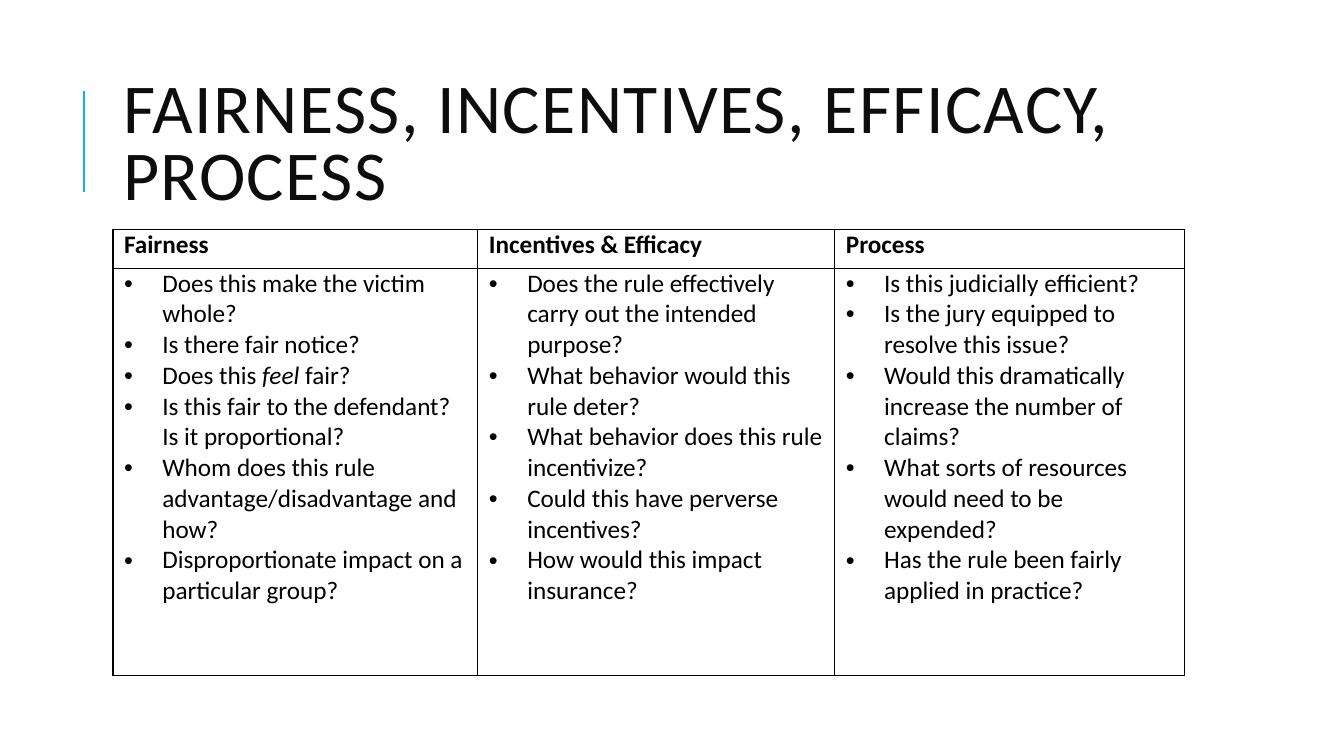
from lxml import etree
from pptx import Presentation
from pptx.dml.color import RGBColor
from pptx.enum import shapes, text
from pptx.oxml import ns
from pptx.util import Inches, Pt

COLORS = {"accent": "1CADE4", "title": "0D0D0D", "ink": "000000"}
FONT = "Calibri"
COLUMNS = [
    ("Fairness", 3.62, [
        "Does this make the victim whole?",
        "Is there fair notice?",
        "Does this *feel *fair?",
        "Is this fair to the defendant? Is it proportional?",
        "Whom does this rule advantage/disadvantage and how?",
        "Disproportionate impact on a particular group?",
    ]),
    ("Incentives & Efficacy", 3.54, [
        "Does the rule effectively carry out the intended purpose?",
        "What behavior would this rule deter?",
        "What behavior does this rule incentivize?",
        "Could this have perverse incentives?",
        "How would this impact insurance?",
    ]),
    ("Process", 3.47, [
        "Is this judicially efficient?",
        "Is the jury equipped to resolve this issue?",
        "Would this dramatically increase the number of claims?",
        "What sorts of resources would need to be expended?",
        "Has the rule been fairly applied in practice?",
    ]),
]


def style_run(run, size, color, bold=False):
    run.font.name = FONT
    run.font.size = Pt(size)
    run.font.bold = bold
    run.font.color.rgb = RGBColor.from_string(COLORS[color])


def style_cell(cell):
    cell.margin_left = cell.margin_right = Inches(0.11)
    cell.margin_top = cell.margin_bottom = 0
    properties = cell._tc.get_or_add_tcPr()
    for side in ("lnL", "lnR", "lnT", "lnB"):
        border = etree.SubElement(properties, ns.qn(f"a:{side}"), w=str(Pt(1)))
        fill = etree.SubElement(border, ns.qn("a:solidFill"))
        etree.SubElement(fill, ns.qn("a:srgbClr"), val=COLORS["ink"])
    cell.fill.background()


presentation = Presentation()
presentation.slide_width = Inches(13.33)
presentation.slide_height = Inches(7.5)
slide = presentation.slides.add_slide(presentation.slide_layouts[5])

accent_line = slide.shapes.add_connector(
    shapes.MSO_CONNECTOR.STRAIGHT, Inches(0.83), Inches(1.9), Inches(0.83), Inches(0.9))
accent_line.line.color.rgb = RGBColor.from_string(COLORS["accent"])
accent_line.line.width = Pt(1.5)
etree.SubElement(accent_line._element.spPr, ns.qn("a:effectLst"))

title = slide.shapes.title
title.left, title.top = Inches(1.12), Inches(0.64)
title.width, title.height = Inches(10.63), Inches(1.64)
title.text_frame.text = "FAIRNESS, INCENTIVES, EFFICACY, PROCESS"
title.text_frame.word_wrap = True
title.text_frame.auto_size = text.MSO_AUTO_SIZE.NONE
title.text_frame.vertical_anchor = text.MSO_ANCHOR.MIDDLE
heading = title.text_frame.paragraphs[0]
heading.alignment = text.PP_ALIGN.LEFT
heading.line_spacing = 0.8
style_run(heading.runs[0], 50, "title")
heading.runs[0].font._element.set("spc", "100")

table = slide.shapes.add_table(
    2, len(COLUMNS), Inches(1.12), Inches(2.28), Inches(10.63), Inches(4.42)).table
table.first_row = table.horz_banding = False
table.rows[0].height = Inches(0.38)
table.rows[1].height = Inches(4.04)

for index, (header, width, questions) in enumerate(COLUMNS):
    table.columns[index].width = Inches(width)
    header_cell, body_cell = table.cell(0, index), table.cell(1, index)
    style_cell(header_cell)
    style_cell(body_cell)
    header_cell.text_frame.text = header
    style_run(header_cell.text_frame.paragraphs[0].runs[0], 18, "ink", bold=True)

    body_cell.text_frame.text = "\n".join(questions)
    for paragraph, question in zip(body_cell.text_frame.paragraphs, questions):
        properties = paragraph._p.get_or_add_pPr()
        properties.set("marL", str(Inches(0.38)))
        properties.set("indent", str(-Inches(0.38)))
        etree.SubElement(properties, ns.qn("a:buFont"), typeface="Arial")
        etree.SubElement(properties, ns.qn("a:buChar"), char="•")
        paragraph.clear()
        for position, part in enumerate(question.split("*")):
            run = paragraph.add_run()
            run.text = part
            style_run(run, 18, "ink")
            run.font.italic = position % 2 == 1

presentation.save("out.pptx")
